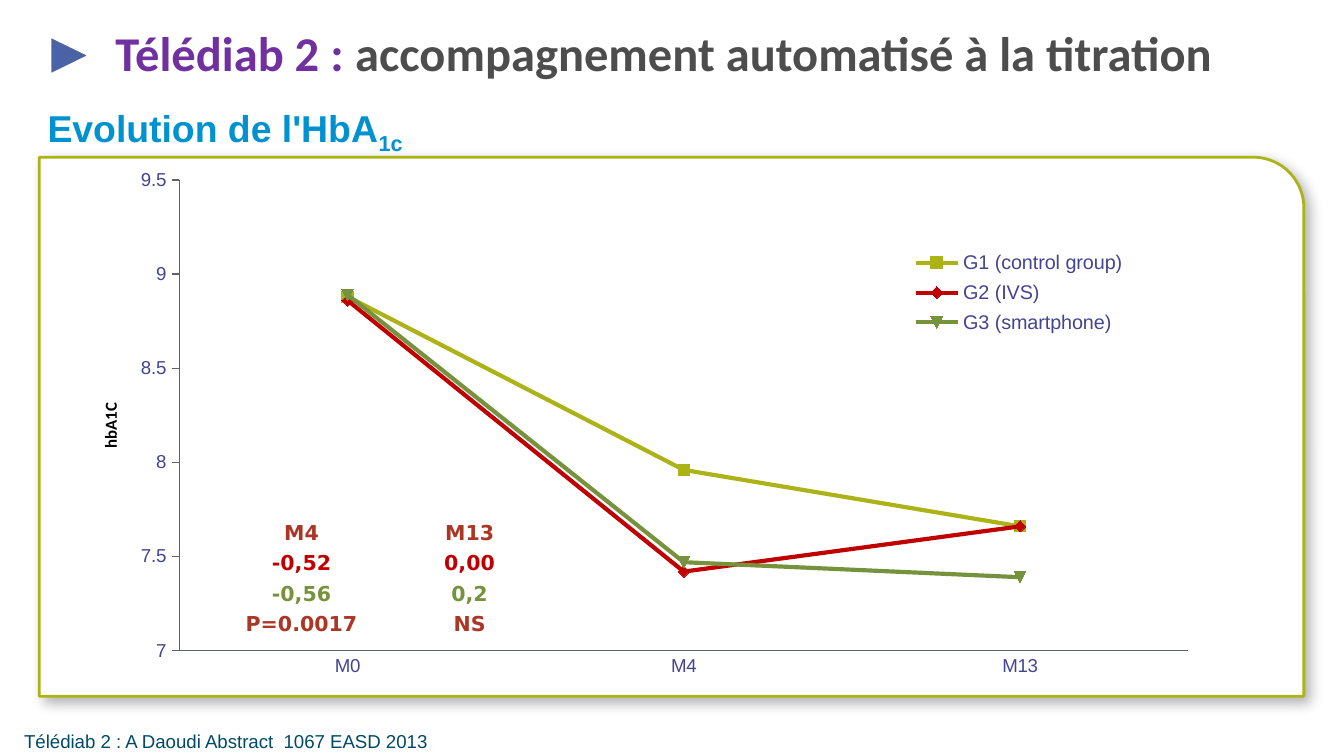
from lxml import etree
from pptx import Presentation
from pptx import util as u
from pptx.chart.data import CategoryChartData
from pptx.dml.color import RGBColor
from pptx.enum import chart as charts, shapes, text
from pptx.oxml import parse_xml
from pptx.oxml.ns import nsdecls, qn

BLUE = RGBColor(0x49, 0x63, 0xA6)
WHITE = RGBColor(0xFF, 0xFF, 0xFF)
BLACK = RGBColor(0, 0, 0)
LIME = RGBColor(0xAC, 0xB3, 0x17)
RED = RGBColor(0xC0, 0, 0)
GREEN = RGBColor(0x76, 0x92, 0x3C)
BRICK = RGBColor(0xAB, 0x36, 0x23)
PURPLE = RGBColor(0x70, 0x30, 0xA0)
DARK_GREY = RGBColor(0x4D, 0x4D, 0x4D)
AXIS_GREY = RGBColor(0x5E, 0x63, 0x6A)
INDIGO = RGBColor(0x44, 0x44, 0x92)
SKY = RGBColor(0, 0x92, 0xD0)
NAVY = RGBColor(0, 0x49, 0x68)

TITLE = [("Télédiab 2 : ", {"color": PURPLE}),
         ("accompagnement automatisé à la titration", {"color": DARK_GREY})]
SUBTITLE = [("Evolution de l'HbA", {}), ("1c", {"baseline": -25})]
SOURCE = [("Télédiab 2 : A Daoudi Abstract  1067 EASD 2013", {})]

VISITS = ["M0", "M4", "M13"]
AXIS_TITLE = "hbA1C"
GROUPS = [
    ("G1 (control group)", [8.88, 7.96, 7.66], LIME),
    ("G2 (IVS)", [8.86, 7.42, 7.66], RED),
    ("G3 (smartphone)", [8.89, 7.47, 7.39], GREEN),
]
DIFFERENCES = [
    (BRICK, ["M4", "M13"]),
    (RED, ["-0,52", "0,00"]),
    (GREEN, ["-0,56", "0,2"]),
    (BRICK, ["P=0.0017", "NS"]),
]


def points(*lengths):
    return [u.Pt(length) for length in lengths]


def style_font(font, size, name, color, bold=False):
    font.size, font.name, font.bold = u.Pt(size), name, bold
    font.color.rgb = color


def write(frame, spans, size, name, color=BLACK, bold=False, align=None, spacing=None):
    """Fill the first paragraph with (text, overrides) spans."""
    para = frame.paragraphs[0]
    para.alignment, para.line_spacing = align, spacing
    for words, overrides in spans:
        span = para.add_run()
        span.text = words
        style_font(span.font, size, name, overrides.get("color", color), bold)
        if "baseline" in overrides:
            span.font._element.set("baseline", str(overrides["baseline"] * 1000))


def add_text(slide, place, spans, wrap=False, anchor=text.MSO_ANCHOR.TOP, **style):
    frame = slide.shapes.add_textbox(*points(*place)).text_frame
    frame.word_wrap, frame.vertical_anchor = wrap, anchor
    write(frame, spans, **style)


def add_shape(slide, kind, place, fill, line):
    shape = slide.shapes.add_shape(kind, *points(*place))
    shape.shadow.inherit = False
    shape.fill.solid()
    shape.fill.fore_color.rgb = fill
    shape.line.color.rgb = line
    shape.line.width = u.Pt(1.5)
    return shape


def add_soft_shadow(shape):
    effects = shape._element.spPr.find(qn("a:effectLst"))
    effects.append(parse_xml(
        f'<a:outerShdw {nsdecls("a")} blurRad="{u.Pt(7)}" dist="{u.Pt(4)}" dir="2700000" '
        'algn="tl" rotWithShape="0"><a:srgbClr val="000000"><a:alpha val="30000"/>'
        '</a:srgbClr></a:outerShdw>'))


def set_layout(parent, index, inner=False, **fractions):
    """Place a chart part by fractions of the chart's size."""
    for old in parent.findall(qn("c:layout")):
        parent.remove(old)
    layout = etree.Element(qn("c:layout"))
    manual = etree.SubElement(layout, qn("c:manualLayout"))
    settings = {"layoutTarget": "inner"} if inner else {}
    settings.update(xMode="edge", yMode="edge", **fractions)
    for tag, value in settings.items():
        etree.SubElement(manual, qn(f"c:{tag}")).set("val", str(value))
    parent.insert(index, layout)


def style_axis(axis, tick):
    axis.has_major_gridlines = False
    axis.major_tick_mark, axis.minor_tick_mark = tick, charts.XL_TICK_MARK.NONE
    axis.format.line.color.rgb = AXIS_GREY
    axis.format.line.width = u.Pt(0.75)
    style_font(axis.tick_labels.font, 10, "Arial", INDIGO)


def add_hba1c_chart(slide, place):
    data = CategoryChartData()
    data.categories = VISITS
    for name, values, _ in GROUPS:
        data.add_series(name, values)
    chart = slide.shapes.add_chart(
        charts.XL_CHART_TYPE.LINE_MARKERS, *points(*place), data).chart
    chart.has_title = False
    style_font(chart.font, 10, "Arial", INDIGO)
    set_layout(chart._chartSpace.chart.plotArea, 0, inner=True,
               x=0.081, y=0.06, w=0.9, h=0.878)

    style_axis(chart.category_axis, charts.XL_TICK_MARK.NONE)
    axis = chart.value_axis
    style_axis(axis, charts.XL_TICK_MARK.OUTSIDE)
    axis.minimum_scale, axis.maximum_scale, axis.major_unit = 7, 9.5, 0.5
    axis.tick_labels.number_format = "General"
    axis.tick_labels.number_format_is_linked = False
    frame = axis.axis_title.text_frame
    write(frame, [(AXIS_TITLE, {})], size=9, name="Calibri", bold=True)
    frame._txBody.bodyPr.set("rot", "-5400000")
    frame._txBody.bodyPr.set("vert", "horz")
    set_layout(axis.axis_title._element, 1, x=0.007, y=0.47)

    chart.has_legend = True
    chart.legend.position = charts.XL_LEGEND_POSITION.RIGHT
    chart.legend.include_in_layout = True
    style_font(chart.legend.font, 10.6, "Arial", INDIGO)
    set_layout(chart.legend._element, 1, x=0.73, y=0.18, w=0.2, h=0.18)

    plot = chart.plots[0]
    plot.vary_by_categories = False
    for series, (_, _, color) in zip(plot.series, GROUPS):
        series.smooth = False
        series.format.line.color.rgb = color
        series.format.line.width = u.Pt(2.25)
        series.marker.size = 6
        series.marker.format.fill.solid()
        series.marker.format.fill.fore_color.rgb = color
        series.marker.format.line.color.rgb = color


def add_difference_table(slide, place):
    table = slide.shapes.add_table(
        len(DIFFERENCES), len(DIFFERENCES[0][1]), *points(*place)).table
    table.first_row = table.horz_banding = False
    for r, (color, values) in enumerate(DIFFERENCES):
        for c, value in enumerate(values):
            cell = table.cell(r, c)
            cell.fill.background()
            cell.margin_left = cell.margin_right = u.Pt(5)
            cell.margin_top = cell.margin_bottom = 0
            write(cell.text_frame, [(value, {})], size=11, name="DejaVu Sans",
                  color=color, bold=True, align=text.PP_ALIGN.CENTER, spacing=1.15)


def main():
    deck = Presentation()
    deck.slide_width, deck.slide_height = points(720, 405)
    slide = deck.slides.add_slide(deck.slide_layouts[6])

    pointer = add_shape(slide, shapes.MSO_SHAPE.ISOSCELES_TRIANGLE,
                        (27, 19, 21, 21.5), BLUE, WHITE)
    pointer.rotation = 90
    panel = add_shape(slide, shapes.MSO_SHAPE.ROUND_1_RECTANGLE,
                      (21, 84.25, 677.5, 288.75), WHITE, LIME)
    panel.adjustments[0] = 0.094
    add_soft_shadow(panel)

    add_text(slide, (54.7, 12.2, 620.6, 35.3), TITLE, wrap=True,
             anchor=text.MSO_ANCHOR.MIDDLE, size=26, name="Calibri", bold=True, spacing=0.9)
    add_hba1c_chart(slide, (47.5, 79.2, 600.5, 287.3))
    add_difference_table(slide, (116.6, 277.2, 180, 65.6))
    add_text(slide, (16.6, 52.6, 208, 31.5), SUBTITLE, size=20, name="Arial",
             color=SKY, bold=True, align=text.PP_ALIGN.CENTER)
    add_text(slide, (5.8, 387.4, 236.2, 19.4), SOURCE, size=10, name="Arial", color=NAVY)
    deck.save("out.pptx")


if __name__ == "__main__":
    main()
